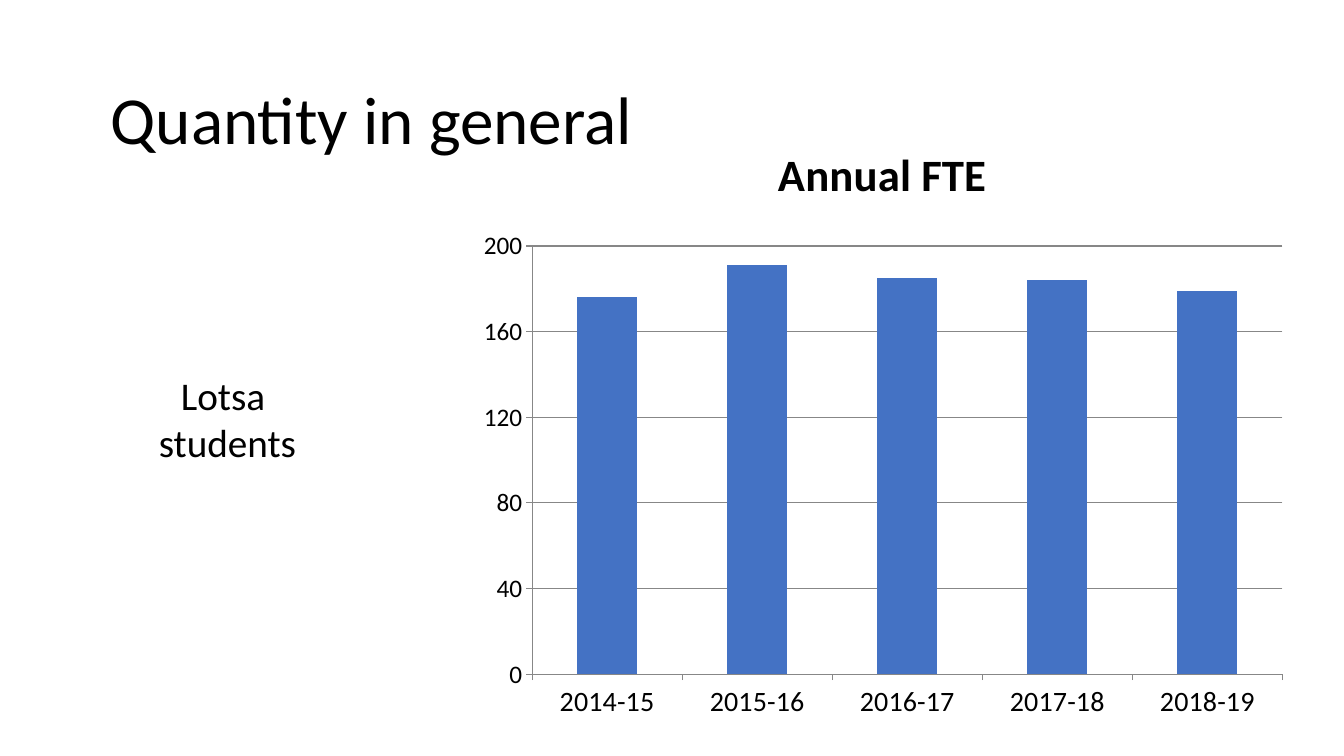
from dataclasses import dataclass

from lxml import etree
from pptx import Presentation
from pptx.chart.data import CategoryChartData
from pptx.dml.color import RGBColor
from pptx.enum.chart import XL_CHART_TYPE, XL_TICK_MARK
from pptx.enum.text import MSO_AUTO_SIZE, PP_ALIGN
from pptx.oxml.ns import qn
from pptx.util import Pt

COLUMN = XL_CHART_TYPE.COLUMN_CLUSTERED
OUTSIDE, NO_TICK = XL_TICK_MARK.OUTSIDE, XL_TICK_MARK.NONE
LEFT, CENTER = PP_ALIGN.LEFT, PP_ALIGN.CENTER
GROW = MSO_AUTO_SIZE.SHAPE_TO_FIT_TEXT


@dataclass(frozen=True)
class Theme:
    font: str = "Calibri"
    text: RGBColor = RGBColor(0, 0, 0)
    bar: RGBColor = RGBColor(0x44, 0x72, 0xC4)
    rule: RGBColor = RGBColor(0x87, 0x87, 0x87)
    title: int = 48
    note: int = 28
    chart_title: int = 32
    categories: int = 20
    values: int = 18


THEME = Theme()
YEARS = ["2014-15", "2015-16", "2016-17", "2017-18", "2018-19"]
FTE = [176, 191, 185, 184, 179]
PLOT_AREA = {"x": 0.08, "y": 0.21, "w": 0.9, "h": 0.7}


def set_all(obj, **values):
    for name, value in values.items():
        setattr(obj, name, value)


def style_font(font, size, bold=False):
    set_all(font, name=THEME.font, size=Pt(size), bold=bold)
    font.color.rgb = THEME.text


def style_line(line):
    line.color.rgb = THEME.rule
    line.width = Pt(0.75)


def add_text(s, box, text, size, align=LEFT):
    tf = s.shapes.add_textbox(*map(Pt, box)).text_frame
    set_all(tf, word_wrap=True, auto_size=GROW)
    p = tf.paragraphs[0]
    p.text = text
    p.alignment = align
    for r in p.runs:
        style_font(r.font, size)


def place_plot(chart):
    # Fixed inner plot area, as fractions of the chart box
    area = chart.element.find(".//" + qn("c:plotArea"))
    layout = area.find(qn("c:layout"))
    if layout is None:
        layout = etree.Element(qn("c:layout"))
        area.insert(0, layout)
    manual = etree.SubElement(layout, qn("c:manualLayout"))
    settings = {"layoutTarget": "inner", "xMode": "edge", "yMode": "edge", **PLOT_AREA}
    for tag, value in settings.items():
        etree.SubElement(manual, qn("c:" + tag)).set("val", str(value))


def add_fte_chart(s, box):
    data = CategoryChartData()
    data.categories = YEARS
    data.add_series("Annual FTE", FTE)
    chart = s.shapes.add_chart(COLUMN, *map(Pt, box), data).chart
    chart.has_legend = False
    style_font(chart.font, 10)

    # Title
    tf = chart.chart_title.text_frame
    tf.text = "Annual FTE"
    style_font(tf.paragraphs[0].runs[0].font, THEME.chart_title, bold=True)
    chart.chart_title.include_in_layout = False

    # Bars
    plot = chart.plots[0]
    set_all(plot, gap_width=150, vary_by_categories=False)
    fill = plot.series[0].format.fill
    fill.solid()
    fill.fore_color.rgb = THEME.bar

    # Axes
    axes = {chart.category_axis: THEME.categories, chart.value_axis: THEME.values}
    for axis, size in axes.items():
        set_all(axis, major_tick_mark=OUTSIDE, minor_tick_mark=NO_TICK)
        style_font(axis.tick_labels.font, size)
        style_line(axis.format.line)
    set_all(chart.value_axis, minimum_scale=0, maximum_scale=200,
            major_unit=40, has_major_gridlines=True)
    style_line(chart.value_axis.major_gridlines.format.line)
    place_plot(chart)


def build_slide(prs):
    s = prs.slides.add_slide(prs.slide_layouts[6])
    add_text(s, (72, 52, 429, 65.5), "Quantity in general", THEME.title)
    add_fte_chart(s, (332.5, 84, 595.5, 437))
    add_text(s, (93.5, 261.5, 138, 75), "Lotsa \vstudents", THEME.note, CENTER)


def main():
    prs = Presentation()
    set_all(prs, slide_width=Pt(960), slide_height=Pt(540))
    build_slide(prs)
    prs.save("out.pptx")


if __name__ == "__main__":
    main()
